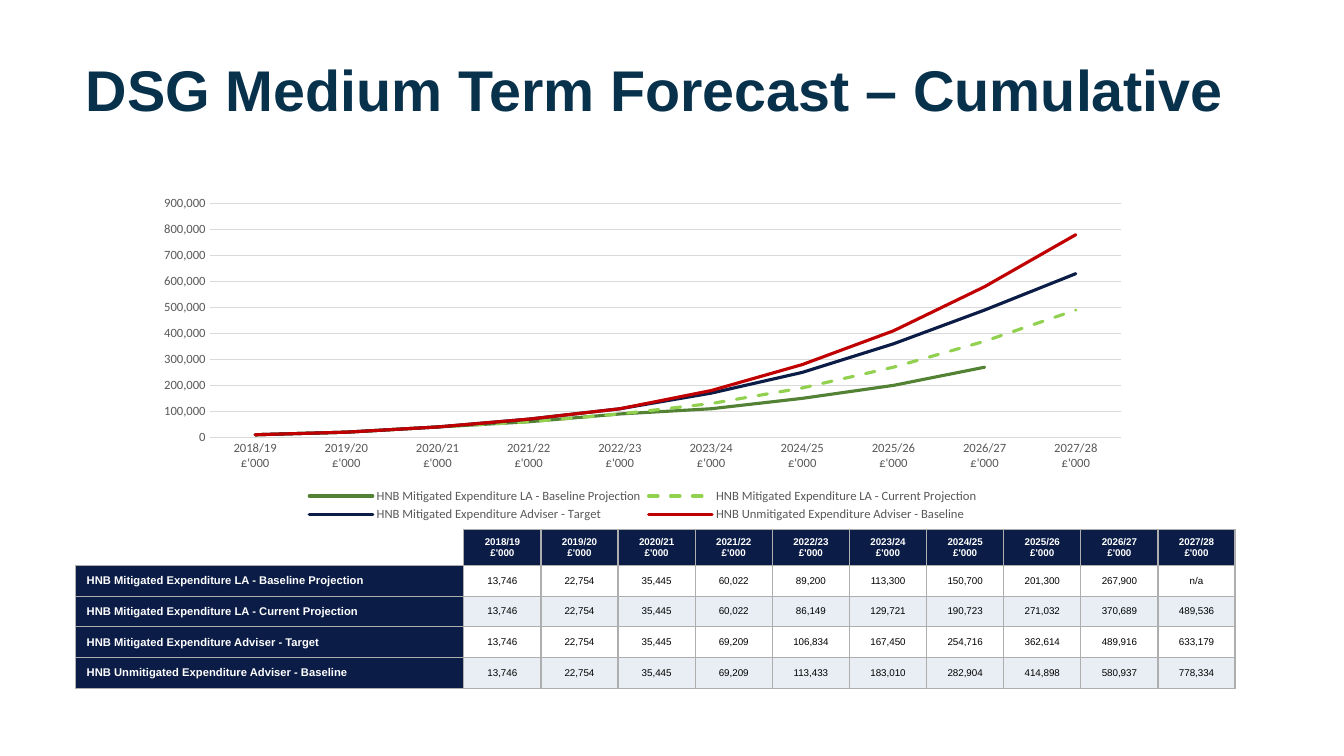
import dataclasses

import lxml.etree
import pptx
import pptx.chart.data
import pptx.dml.color
import pptx.enum.chart
import pptx.enum.dml
import pptx.enum.text
import pptx.oxml.ns
import pptx.util

Inches = pptx.util.Inches
Pt = pptx.util.Pt
qn = pptx.oxml.ns.qn


@dataclasses.dataclass(frozen=True)
class Theme:
    title: str = "08314C"
    navy: str = "0B1D47"
    band: str = "E9EEF4"
    border: str = "AEAEAE"
    grid: str = "D9D9D9"
    axis_text: str = "595959"
    white: str = "FFFFFF"
    black: str = "000000"
    text_font: str = "Arial"
    chart_font: str = "Calibri"
    title_size: float = 41
    chart_size: float = 9
    label_size: float = 8
    cell_size: float = 7


THEME = Theme()
YEARS = [f"{year}/{year % 100 + 1}\n£'000" for year in range(2018, 2028)]

# Name, line colour, dashed, yearly values
FORECASTS = [
    ("HNB Mitigated Expenditure LA - Baseline Projection", "548235", False,
     [13746, 22754, 35445, 60022, 89200, 113300, 150700, 201300, 267900, None]),
    ("HNB Mitigated Expenditure LA - Current Projection", "92D050", True,
     [13746, 22754, 35445, 60022, 86149, 129721, 190723, 271032, 370689, 489536]),
    ("HNB Mitigated Expenditure Adviser - Target", THEME.navy, False,
     [13746, 22754, 35445, 69209, 106834, 167450, 254716, 362614, 489916, 633179]),
    ("HNB Unmitigated Expenditure Adviser - Baseline", "C00000", False,
     [13746, 22754, 35445, 69209, 113433, 183010, 282904, 414898, 580937, 778334]),
]


def rgb(value):
    return pptx.dml.color.RGBColor.from_string(value)


def style_font(font, name, size, color, bold=False):
    font.name, font.size, font.bold = name, Pt(size), bold
    font.color.rgb = rgb(color)


def add_title(page, left, top, width, height):
    box = page.shapes.title
    box.left, box.top, box.width, box.height = map(Inches, (left, top, width, height))
    frame = box.text_frame
    frame.word_wrap = True
    frame.auto_size = pptx.enum.text.MSO_AUTO_SIZE.NONE
    frame.vertical_anchor = pptx.enum.text.MSO_ANCHOR.MIDDLE
    para = frame.paragraphs[0]
    para.alignment = pptx.enum.text.PP_ALIGN.LEFT
    para.line_spacing = 0.9
    span = para.add_run()
    span.text = "DSG Medium Term Forecast – Cumulative"
    style_font(span.font, THEME.text_font, THEME.title_size, THEME.title, True)


def add_forecast_chart(page, left, top, width, height):
    data = pptx.chart.data.CategoryChartData(number_format="#,##0")
    data.categories = YEARS
    for name, _, _, values in FORECASTS:
        # Plotted to the nearest ten thousand
        data.add_series(name, [value and round(value, -4) for value in values])
    chart = page.shapes.add_chart(
        pptx.enum.chart.XL_CHART_TYPE.LINE,
        *map(Inches, (left, top, width, height)), data).chart
    chart.has_title = False
    style_font(chart.font, THEME.chart_font, THEME.chart_size, THEME.axis_text)

    # Legend
    chart.has_legend = True
    chart.legend.position = pptx.enum.chart.XL_LEGEND_POSITION.BOTTOM
    chart.legend.include_in_layout = False
    style_font(chart.legend.font, THEME.chart_font, THEME.chart_size, THEME.axis_text)

    # Axes
    years, amounts = chart.category_axis, chart.value_axis
    for axis in (years, amounts):
        axis.major_tick_mark = pptx.enum.chart.XL_TICK_MARK.NONE
        axis.minor_tick_mark = pptx.enum.chart.XL_TICK_MARK.NONE
        style_font(axis.tick_labels.font, THEME.chart_font, THEME.chart_size,
                   THEME.axis_text)
    amounts.minimum_scale, amounts.maximum_scale = 0, 900000
    amounts.major_unit = 100000
    amounts.tick_labels.number_format = r"#,##0;[Red]\(#,##0\)"
    amounts.tick_labels.number_format_is_linked = False
    amounts.format.line.fill.background()
    amounts.has_major_gridlines = True
    for line in (years.format.line, amounts.major_gridlines.format.line):
        line.color.rgb = rgb(THEME.grid)
        line.width = Pt(0.75)

    # Forecast lines with round ends
    plot = chart.plots[0]
    plot.vary_by_categories = False
    for series, (_, color, dashed, _) in zip(plot.series, FORECASTS):
        series.smooth = False
        series.marker.style = pptx.enum.chart.XL_MARKER_STYLE.NONE
        series.format.line.color.rgb = rgb(color)
        series.format.line.width = Pt(2.25)
        if dashed:
            series.format.line.dash_style = pptx.enum.dml.MSO_LINE.DASH
        series._element.find(f"{qn('c:spPr')}/{qn('a:ln')}").set("cap", "rnd")


def set_borders(cell, sides):
    properties = cell._tc.get_or_add_tcPr()
    for index, side in enumerate(sides):
        line = lxml.etree.Element(qn(f"a:ln{side}"), w=str(Pt(1)))
        fill = lxml.etree.SubElement(line, qn("a:solidFill"))
        lxml.etree.SubElement(fill, qn("a:srgbClr"), val=THEME.border)
        properties.insert(index, line)


def format_cell(cell, sides="LRTB", fill=None, indent=0):
    cell.margin_left = Inches(indent)
    cell.margin_right = cell.margin_top = cell.margin_bottom = 0
    cell.vertical_anchor = pptx.enum.text.MSO_ANCHOR.MIDDLE
    if fill:
        cell.fill.solid()
        cell.fill.fore_color.rgb = rgb(fill)
    else:
        cell.fill.background()
    set_borders(cell, sides)


def fill_cell(cell, text, size, color, fill=None, bold=False, indent=0):
    format_cell(cell, fill=fill, indent=indent)
    para = cell.text_frame.paragraphs[0]
    align = pptx.enum.text.PP_ALIGN
    para.alignment = align.LEFT if indent else align.CENTER
    for index, part in enumerate(text.split("\n")):
        if index:
            para.add_line_break()
        span = para.add_run()
        span.text = part
        style_font(span.font, THEME.text_font, size, color, bold)


def add_forecast_table(page, left, top, width, height):
    label_width, header_height = 3.85, 0.36
    table = page.shapes.add_table(
        len(FORECASTS) + 1, len(YEARS) + 1,
        *map(Inches, (left, top, width, height))).table
    table.first_row = table.horz_banding = False
    for index, column in enumerate(table.columns):
        column.width = Inches((width - label_width) / len(YEARS) if index else label_width)
    for index, row in enumerate(table.rows):
        row.height = Inches(
            (height - header_height) / len(FORECASTS) if index else header_height)

    # Header row with an empty corner
    corner = table.cell(0, 0)
    format_cell(corner, "RB")
    corner.text_frame.paragraphs[0].font.size = Pt(THEME.cell_size)
    for column, year in enumerate(YEARS, 1):
        fill_cell(table.cell(0, column), year, THEME.cell_size, THEME.white,
                  THEME.navy, bold=True)

    # One banded row per forecast
    for row, (name, _, _, values) in enumerate(FORECASTS, 1):
        fill_cell(table.cell(row, 0), name, THEME.label_size, THEME.white,
                  THEME.navy, bold=True, indent=0.11)
        band = None if row % 2 else THEME.band
        for column, value in enumerate(values, 1):
            text = "n/a" if value is None else f"{value:,}"
            fill_cell(table.cell(row, column), text, THEME.cell_size, THEME.black, band)


def main():
    deck = pptx.Presentation()
    deck.slide_width, deck.slide_height = Inches(13.33), Inches(7.5)
    page = deck.slides.add_slide(deck.slide_layouts.get_by_name("Title Only"))
    add_title(page, 0.75, 0.4, 11.67, 1.05)
    add_forecast_chart(page, 1.43, 1.88, 9.89, 3.34)
    add_forecast_table(page, 0.75, 5.25, 11.5, 1.58)
    deck.save("out.pptx")


if __name__ == "__main__":
    main()
